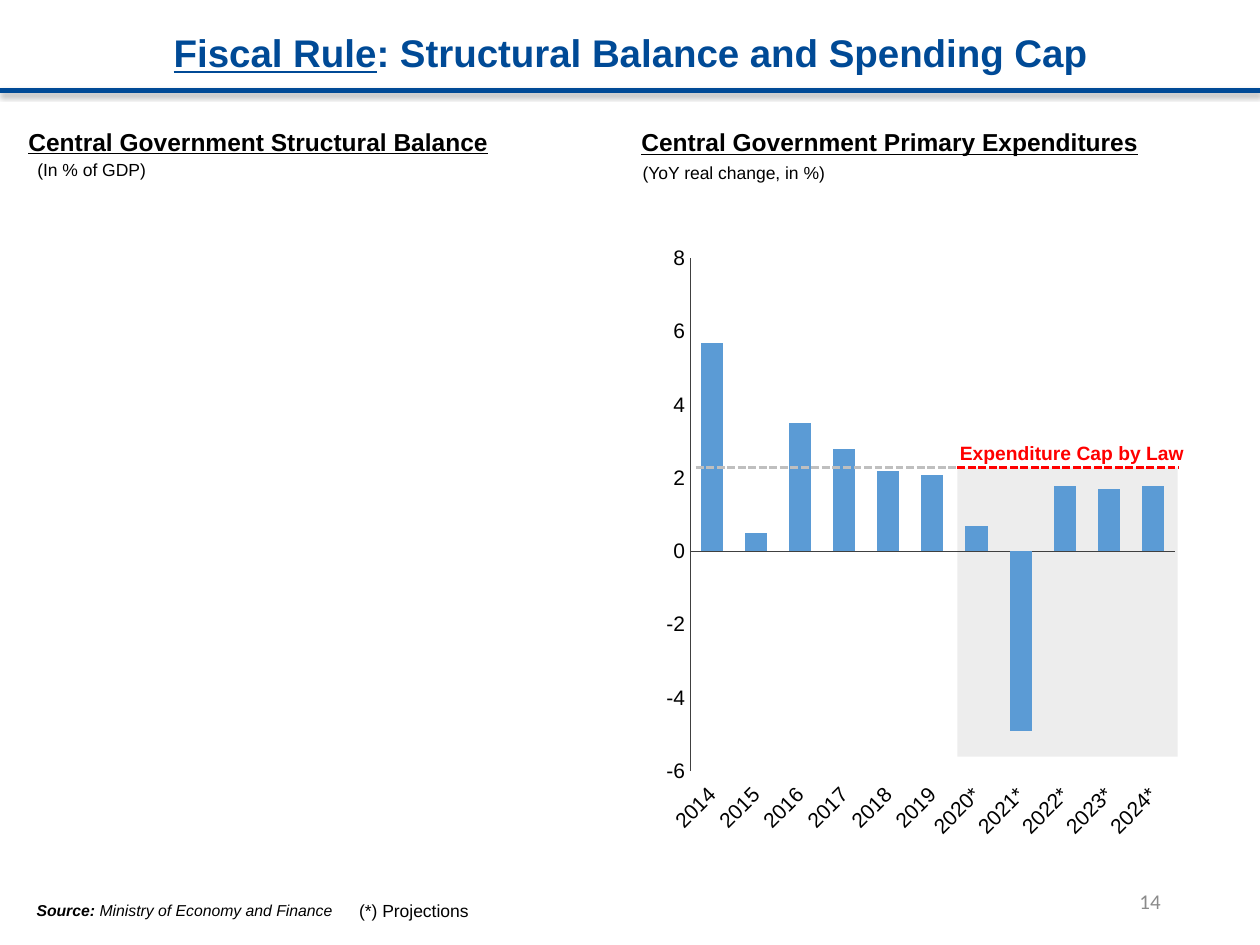
from dataclasses import dataclass

from lxml import etree
from pptx import Presentation
from pptx.chart.data import CategoryChartData
from pptx.dml.color import RGBColor
from pptx.enum.chart import XL_CHART_TYPE, XL_TICK_LABEL_POSITION, XL_TICK_MARK
from pptx.enum.dml import MSO_LINE
from pptx.enum.shapes import MSO_CONNECTOR, MSO_SHAPE
from pptx.enum.text import MSO_ANCHOR, MSO_AUTO_SIZE, PP_ALIGN
from pptx.oxml import parse_xml
from pptx.oxml.ns import nsdecls, qn
from pptx.util import Pt

COLUMNS = XL_CHART_TYPE.COLUMN_CLUSTERED
STRAIGHT = MSO_CONNECTOR.STRAIGHT
RECTANGLE = MSO_SHAPE.RECTANGLE
DASHED = MSO_LINE.SQUARE_DOT
TOP, MIDDLE, BOTTOM = MSO_ANCHOR.TOP, MSO_ANCHOR.MIDDLE, MSO_ANCHOR.BOTTOM
LEFT, CENTER, RIGHT = PP_ALIGN.LEFT, PP_ALIGN.CENTER, PP_ALIGN.RIGHT
GROW = MSO_AUTO_SIZE.SHAPE_TO_FIT_TEXT
NO_TICKS = XL_TICK_MARK.NONE
LOW = XL_TICK_LABEL_POSITION.LOW


@dataclass(frozen=True)
class Theme:
    font: str = "Arial"
    number_font: str = "Calibri"
    navy: str = "004A96"
    black: str = "000000"
    red: str = "FF0000"
    bar: str = "5B9BD5"
    axis: str = "404040"
    band: str = "EDEDED"
    past_cap: str = "BFBFBF"
    page: str = "8B8B8B"
    title_size: float = 22
    heading_size: float = 14
    axis_size: float = 12
    cap_size: float = 11
    note_size: float = 10
    source_size: float = 9


THEME = Theme()
HEADING_INSETS = (3.6, 2.2, 3.6, 2.2)
UNIT_INSETS = (4.3, 0, 0, 0)
NOTE_INSETS = (6.5, 2.9, 6.5, 2.9)
DEFAULT_INSETS = (7.2, 3.6, 7.2, 3.6)

CAP_Y = 267.1
PROJECTION_X = 547
EXPENDITURE_GROWTH = {
    "2014": 5.7, "2015": 0.5, "2016": 3.5, "2017": 2.8, "2018": 2.2, "2019": 2.1,
    "2020*": 0.7, "2021*": -4.9, "2022*": 1.8, "2023*": 1.7, "2024*": 1.8,
}


def rgb(color):
    return RGBColor.from_string(color)


def set_font(font, size, color=THEME.black, name=THEME.font):
    font.size, font.name = Pt(size), name
    font.color.rgb = rgb(color)


def add_text(slide, box, parts, size, color=THEME.black, font=THEME.font,
             insets=DEFAULT_INSETS, anchor=MIDDLE, align=LEFT, grow=False):
    """Add one paragraph; parts pairs each run's text with its set of styles."""
    label = slide.shapes.add_textbox(*map(Pt, box))
    frame = label.text_frame
    frame.word_wrap = True
    frame.vertical_anchor = anchor
    if grow:
        frame.auto_size = GROW
    (frame.margin_left, frame.margin_top,
     frame.margin_right, frame.margin_bottom) = map(Pt, insets)
    paragraph = frame.paragraphs[0]
    paragraph.alignment = align
    for text, styles in parts:
        run = paragraph.add_run()
        run.text = text
        set_font(run.font, size, color, font)
        run.font.bold = "bold" in styles
        run.font.italic = "italic" in styles
        run.font.underline = "underline" in styles
    return paragraph


def add_rule(slide, x1, x2, y, color, width, dash=None):
    rule = slide.shapes.add_connector(STRAIGHT, Pt(x1), Pt(y), Pt(x2), Pt(y))
    rule.line.color.rgb = rgb(color)
    rule.line.width = Pt(width)
    if dash is not None:
        rule.line.dash_style = dash
    return etree.SubElement(rule._element.spPr, qn("a:effectLst"))


def add_title(slide):
    title = add_text(slide, (14.4, 5, 692, 53.3),
                     [("Fiscal Rule", {"bold", "underline"}),
                      (": Structural Balance and Spending Cap", {"bold"})],
                     THEME.title_size, THEME.navy, align=CENTER)
    title.line_spacing = 0.9
    effects = add_rule(slide, 0, 720, 51.8, THEME.navy, 3)
    effects.append(parse_xml(
        f'<a:outerShdw {nsdecls("a")} blurRad="{Pt(3.1)}" dist="{Pt(1.8)}" '
        f'dir="5400000" rotWithShape="0"><a:srgbClr val="{THEME.black}">'
        '<a:alpha val="35000"/></a:srgbClr></a:outerShdw>'))


def add_panel_heading(slide, heading, heading_box, unit, unit_box):
    add_text(slide, heading_box, [(heading, {"bold", "underline"})],
             THEME.heading_size, insets=HEADING_INSETS)
    caption = add_text(slide, unit_box, [(unit, set())], THEME.note_size,
                       insets=UNIT_INSETS, anchor=BOTTOM, grow=True)
    caption.space_before = Pt(2)
    properties = caption._p.get_or_add_pPr()
    properties.set("marL", str(Pt(18)))
    properties.set("indent", str(Pt(-18)))


def add_footnote(slide, box, parts, size):
    note = add_text(slide, box, parts, size, insets=NOTE_INSETS,
                    anchor=BOTTOM, grow=True)
    note.line_spacing = 0.9
    note.space_before = Pt(0.5)


def style_axis(axis, line_width):
    axis.has_major_gridlines = False
    axis.major_tick_mark = axis.minor_tick_mark = NO_TICKS
    axis.format.line.color.rgb = rgb(THEME.axis)
    axis.format.line.width = Pt(line_width)
    set_font(axis.tick_labels.font, THEME.axis_size)


def place_plot(chart, x, y, w, h):
    """Fix the inner plot area as fractions of the chart."""
    plot_area = chart._chartSpace.chart.plotArea
    for layout in plot_area.findall(qn("c:layout")):
        plot_area.remove(layout)
    sizes = "".join(f'<c:{key} val="{value}"/>'
                    for key, value in zip("xywh", (x, y, w, h)))
    plot_area.insert(0, parse_xml(
        f'<c:layout {nsdecls("c")}><c:manualLayout><c:layoutTarget val="inner"/>'
        f'<c:xMode val="edge"/><c:yMode val="edge"/>{sizes}'
        '</c:manualLayout></c:layout>'))


def add_expenditure_chart(slide):
    growth = CategoryChartData()
    growth.categories = list(EXPENDITURE_GROWTH)
    growth.add_series("Series 1", list(EXPENDITURE_GROWTH.values()))
    chart = slide.shapes.add_chart(
        COLUMNS, Pt(362.9), Pt(135.4), Pt(320.4), Pt(351.4), growth).chart
    chart.has_legend = chart.has_title = False
    set_font(chart.font, THEME.note_size)
    years, percent = chart.category_axis, chart.value_axis
    style_axis(years, 0.75)
    style_axis(percent, 0.5)
    years.tick_label_position = LOW
    percent.minimum_scale, percent.maximum_scale, percent.major_unit = -6, 8, 2
    percent.tick_labels.number_format = "0"
    percent.tick_labels.number_format_is_linked = False
    bars = chart.plots[0]
    bars.gap_width, bars.overlap, bars.vary_by_categories = 100, -27, False
    fill = bars.series[0].format.fill
    fill.solid()
    fill.fore_color.rgb = rgb(THEME.bar)
    bars.series[0].invert_if_negative = False
    place_plot(chart, 0.098, 0.035, 0.865, 0.834)


def add_projection_band(slide):
    band = slide.shapes.add_shape(
        RECTANGLE, Pt(PROJECTION_X), Pt(CAP_Y), Pt(126), Pt(165.3))
    band.shadow.inherit = False
    band.fill.solid()
    band.fill.fore_color.rgb = rgb(THEME.band)
    band.line.fill.background()


def add_spending_cap(slide):
    add_text(slide, (541.4, 248.4, 164.2, 20.2),
             [("Expenditure Cap by Law", {"bold"})],
             THEME.cap_size, THEME.red, anchor=TOP, grow=True)
    add_rule(slide, PROJECTION_X, 673.6, CAP_Y, THEME.red, 1.5, DASHED)
    add_rule(slide, 397.6, PROJECTION_X, CAP_Y, THEME.past_cap, 1.5, DASHED)


def main():
    deck = Presentation()
    deck.slide_width, deck.slide_height = Pt(720), Pt(540)
    slide = deck.slides.add_slide(deck.slide_layouts[6])
    add_title(slide)
    add_panel_heading(
        slide, "Central Government Structural Balance", (12.6, 68.8, 314.6, 23.8),
        "(In % of GDP)", (17, 90.7, 200.2, 12.2))
    add_footnote(slide, (14.4, 512.6, 506.9, 15.8),
                 [("Source:", {"bold", "italic"}),
                  (" Ministry of Economy and Finance", {"italic"})],
                 THEME.source_size)
    add_footnote(slide, (198.7, 511.9, 97.9, 17.3),
                 [("(*) Projections", set())], THEME.note_size)
    add_panel_heading(
        slide, "Central Government Primary Expenditures", (362.9, 69.1, 344.2, 23.8),
        "(YoY real change, in %)", (362.9, 92.2, 200.2, 12.2))
    add_projection_band(slide)
    add_expenditure_chart(slide)
    add_spending_cap(slide)
    add_text(slide, (508.3, 500.4, 162, 28.8), [("14", set())], THEME.axis_size,
             THEME.page, THEME.number_font, align=RIGHT)
    deck.save("out.pptx")


if __name__ == "__main__":
    main()
